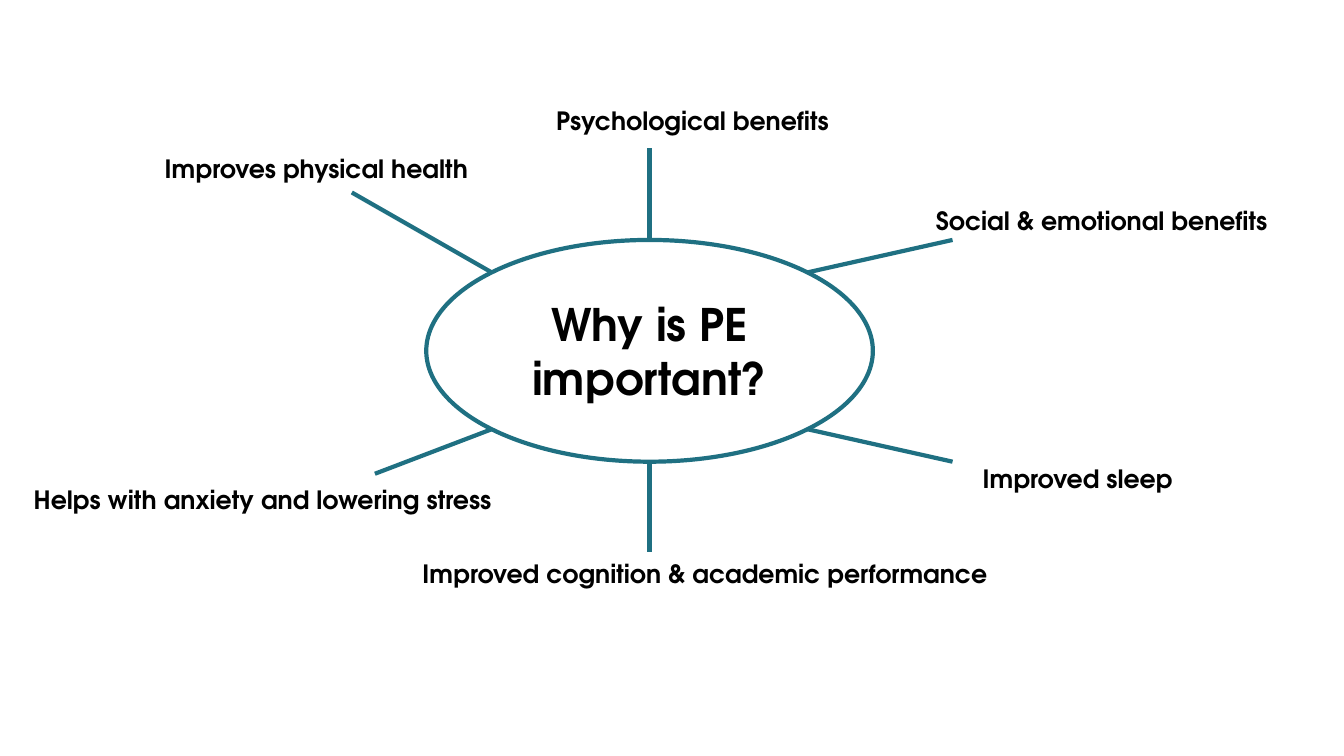
import math
from dataclasses import dataclass

import pptx
import pptx.dml.color
import pptx.enum.shapes
import pptx.enum.text
import pptx.oxml
import pptx.oxml.ns
import pptx.util

Pt = pptx.util.Pt
FONT = "TeX Gyre Adventor"
TEAL = "1F7082"
BLACK = "000000"
WHITE = "FFFFFF"
CENTER_X, CENTER_Y = 464, 250.6
RADIUS_X, RADIUS_Y = 159.5, 79.2
LABEL_HEIGHT = 29


@dataclass
class Benefit:
    text: str
    angle: float
    end_x: float
    end_y: float
    left: float
    top: float
    width: float


BENEFITS = [
    Benefit("Improves physical health", -135, 251.3, 137.5, 108.7, 105.8, 234.7),
    Benefit("Psychological benefits", -90, CENTER_X, 105.8, 388.8, 72, 211.7),
    Benefit("Social & emotional benefits", -45, 680.4, 171.4, 660.2, 143.3, 253.4),
    Benefit("Improved sleep", 45, 680.4, 329.8, 693.4, 327.6, 152.6),
    Benefit("Improved cognition & academic performance", 90, CENTER_X, 394.6, 292.3, 395.3, 422.6),
    Benefit("Helps with anxiety and lowering stress", 135, 267.8, 338.4, 15.1, 342.7, 344.9),
]


def color(value: str) -> pptx.dml.color.RGBColor:
    return pptx.dml.color.RGBColor.from_string(value)


def style_line(shape) -> None:
    shape.line.color.rgb = color(TEAL)
    shape.line.width = Pt(3)


def write_text(box, text: str, size: float) -> None:
    para = box.text_frame.paragraphs[0]
    para.alignment = pptx.enum.text.PP_ALIGN.CENTER
    span = para.add_run()
    span.text = text
    span.font.name = FONT
    span.font.size = Pt(size)
    span.font.bold = True
    span.font.color.rgb = color(BLACK)


def draw_question(page) -> None:
    oval = page.shapes.add_shape(
        pptx.enum.shapes.MSO_SHAPE.OVAL,
        Pt(CENTER_X - RADIUS_X), Pt(CENTER_Y - RADIUS_Y),
        Pt(2 * RADIUS_X), Pt(2 * RADIUS_Y),
    )
    oval.shadow.inherit = False
    oval.fill.solid()
    oval.fill.fore_color.rgb = color(WHITE)
    style_line(oval)
    oval.text_frame.word_wrap = True
    oval.text_frame.vertical_anchor = pptx.enum.text.MSO_ANCHOR.MIDDLE
    write_text(oval, "Why is PE important?", 32)


def draw_benefit(page, benefit: Benefit) -> None:
    angle = math.radians(benefit.angle)
    spoke = page.shapes.add_connector(
        pptx.enum.shapes.MSO_CONNECTOR.STRAIGHT,
        Pt(CENTER_X + RADIUS_X * math.cos(angle)),
        Pt(CENTER_Y + RADIUS_Y * math.sin(angle)),
        Pt(benefit.end_x), Pt(benefit.end_y),
    )
    style_line(spoke)
    properties = spoke._element.spPr
    properties.append(pptx.oxml.parse_xml(f"<a:effectLst {pptx.oxml.ns.nsdecls('a')}/>"))

    label = page.shapes.add_textbox(
        Pt(benefit.left), Pt(benefit.top), Pt(benefit.width), Pt(LABEL_HEIGHT)
    )
    label.text_frame.word_wrap = False
    label.text_frame.auto_size = pptx.enum.text.MSO_AUTO_SIZE.SHAPE_TO_FIT_TEXT
    write_text(label, benefit.text, 18)


def main() -> None:
    deck = pptx.Presentation()
    deck.slide_width = Pt(960)
    deck.slide_height = Pt(540)
    page = deck.slides.add_slide(deck.slide_layouts[6])
    draw_question(page)
    for benefit in BENEFITS:
        draw_benefit(page, benefit)
    deck.save("out.pptx")


if __name__ == "__main__":
    main()
